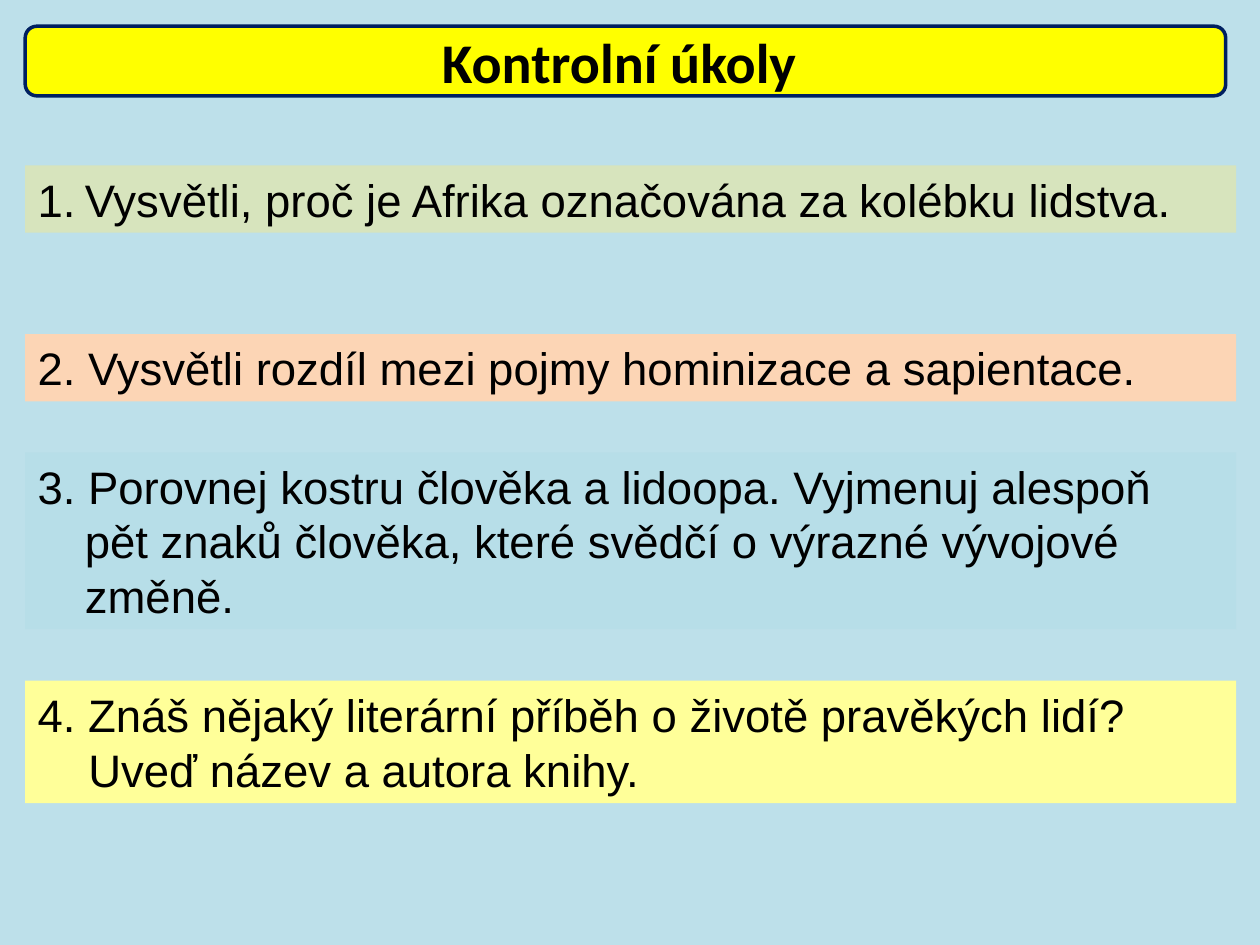
"""Build the slide of review tasks on human evolution."""
import pptx
import pptx.util
import pptx.dml.color
import pptx.enum.shapes
import pptx.enum.text
import lxml.etree
from pptx.util import Pt

COLORS = {
    "background": "BDE0EA",
    "title": "FFFF00",
    "border": "002060",
    "text": "000000",
    "green": "D7E4BD",
    "orange": "FCD5B5",
    "blue": "B7DEE8",
    "yellow": "FFFF99",
}
LEFT = 14.4
HANG = 27
TASKS = [
    (94.5, 38.5, "green", ["Vysvětli, proč je Afrika označována za kolébku lidstva."]),
    (190.9, 38.5, "orange", ["2. Vysvětli rozdíl mezi pojmy hominizace a sapientace."]),
    (258.5, 101, "blue", ["3. Porovnej kostru člověka a lidoopa. Vyjmenuj alespoň pět znaků "
                          "člověka, které svědčí o výrazné vývojové změně."]),
    (389, 70, "yellow", ["4. Znáš nějaký literární příběh o životě pravěkých lidí?",
                         "Uveď název a autora knihy."]),
]


def rgb(name):
    return pptx.dml.color.RGBColor.from_string(COLORS[name])


def add_box(page, kind, place, fill, lines, font, size):
    box = page.shapes.add_shape(kind, *[Pt(length) for length in place])
    box.shadow.inherit = False
    box.fill.solid()
    box.fill.fore_color.rgb = rgb(fill)
    box.line.fill.background()
    box.text_frame.word_wrap = True
    box.text_frame.text = "\n".join(lines)
    for para in box.text_frame.paragraphs:
        para.alignment = pptx.enum.text.PP_ALIGN.LEFT
        for span in para.runs:
            span.font.name = font
            span.font.size = Pt(size)
            span.font.color.rgb = rgb("text")
    return box


deck = pptx.Presentation()
deck.slide_width, deck.slide_height = Pt(720), Pt(540)
page = deck.slides.add_slide(deck.slide_layouts[6])
page.background.fill.solid()
page.background.fill.fore_color.rgb = rgb("background")

shapes = pptx.enum.shapes.MSO_SHAPE
title = add_box(page, shapes.ROUNDED_RECTANGLE, (LEFT, 15, 686, 39.8), "title",
                ["Kontrolní úkoly "], "Calibri", 32)
title.line.color.rgb = rgb("border")
title.line.width = Pt(2)
title.text_frame.vertical_anchor = pptx.enum.text.MSO_ANCHOR.MIDDLE
title.text_frame.paragraphs[0].alignment = pptx.enum.text.PP_ALIGN.CENTER
title.text_frame.paragraphs[0].runs[0].font.bold = True

task_boxes = []
for top, height, fill, lines in TASKS:
    box = add_box(page, shapes.RECTANGLE, (LEFT, top, 692, height), fill, lines, "Arial", 26)
    box.text_frame.vertical_anchor = pptx.enum.text.MSO_ANCHOR.TOP
    box.text_frame.auto_size = pptx.enum.text.MSO_AUTO_SIZE.SHAPE_TO_FIT_TEXT
    properties = box.text_frame.paragraphs[0]._p.get_or_add_pPr()
    properties.set("marL", str(Pt(HANG)))
    properties.set("indent", str(Pt(-HANG)))
    task_boxes.append(box)

first_properties = task_boxes[0].text_frame.paragraphs[0]._p.get_or_add_pPr()
number = lxml.etree.SubElement(first_properties, pptx.oxml.ns.qn("a:buAutoNum"))
number.set("type", "arabicPeriod")

last_properties = task_boxes[-1].text_frame.paragraphs[1]._p.get_or_add_pPr()
last_properties.set("marL", str(Pt(29)))

deck.save("out.pptx")
